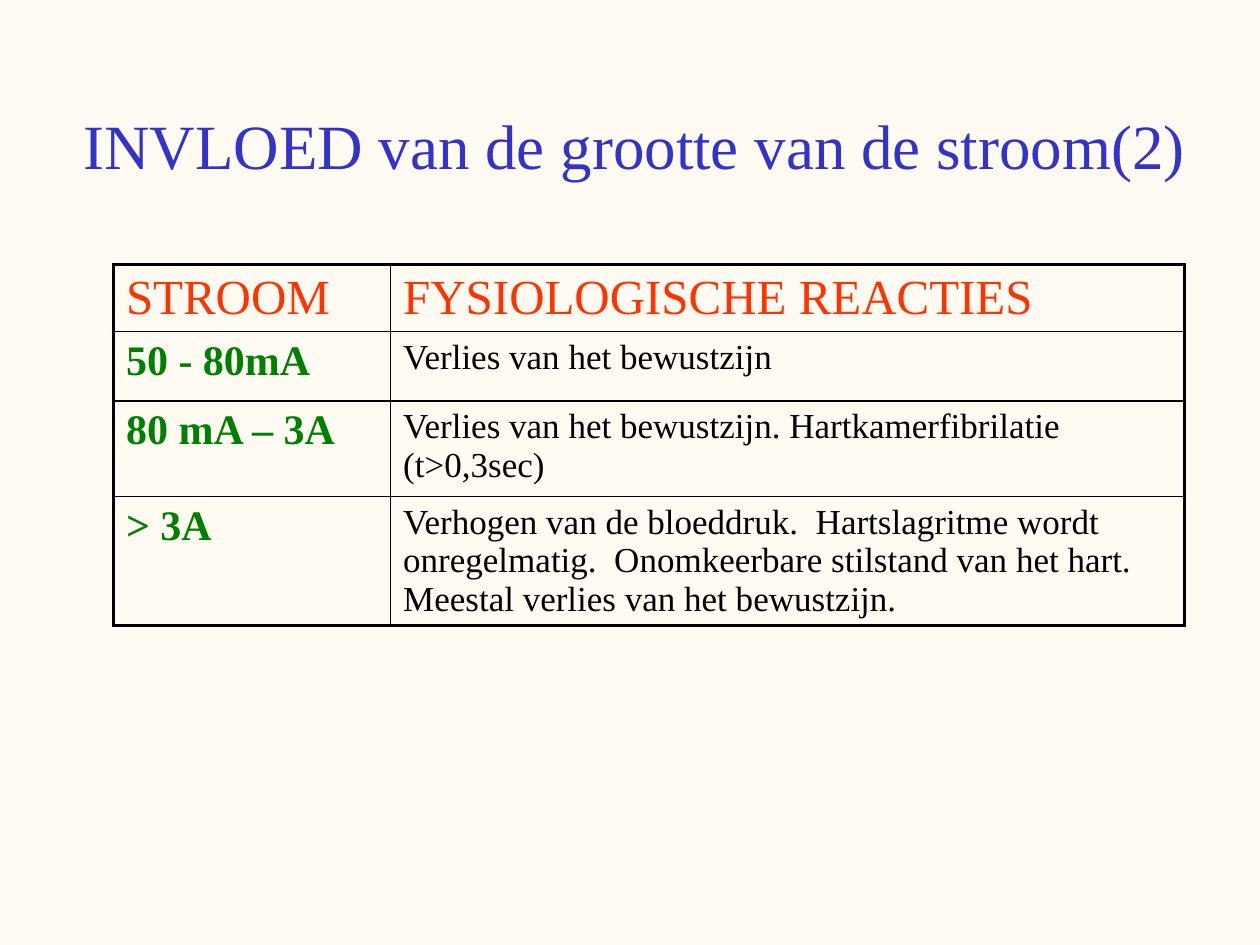
import pptx
import pptx.util
import pptx.dml.color
import pptx.enum.text
import pptx.oxml
import pptx.oxml.ns
from pptx.util import Inches

FONT = "Times New Roman"
BLACK, RED, GREEN, BLUE, CREAM = "000000", "FF3300", "008000", "3333CC", "FFFBF3"
OUTER_LINE, INNER_LINE = 2.25, 1

COLUMN_WIDTHS = [2.2, 6.3]
ROW_HEIGHTS = [0.5, 0.55, 0.76, 0.97]
REACTIONS = [
    ("STROOM", "FYSIOLOGISCHE REACTIES"),
    ("50 - 80mA", "Verlies van het bewustzijn"),
    ("80 mA – 3A", "Verlies van het bewustzijn. Hartkamerfibrilatie (t>0,3sec)"),
    ("> 3A", "Verhogen van de bloeddruk.  Hartslagritme wordt onregelmatig.  "
             "Onomkeerbare stilstand van het hart.  Meestal verlies van het bewustzijn."),
]
# size, colour, bold
HEADER_STYLE = (28, RED, False)
CURRENT_STYLE = (24, GREEN, True)
REACTION_STYLE = (20, BLACK, False)


def rgb(value):
    return pptx.dml.color.RGBColor.from_string(value)


def write(text_frame, text, size, color, bold=False):
    text_frame.text = text
    font = text_frame.paragraphs[0].runs[0].font
    font.name = FONT
    font.size = pptx.util.Pt(size)
    font.bold = bold
    font.color.rgb = rgb(color)


def set_borders(cell, widths):
    """Draw black borders; widths maps L, R, T and B to points."""
    properties = cell._tc.get_or_add_tcPr()
    for position, (side, width) in enumerate(widths.items()):
        line = pptx.oxml.parse_xml(
            f'<a:ln{side} {pptx.oxml.ns.nsdecls("a")} w="{pptx.util.Pt(width)}">'
            f'<a:solidFill><a:srgbClr val="{BLACK}"/></a:solidFill></a:ln{side}>')
        properties.insert(position, line)


def add_title(slide, text):
    title = slide.shapes.title
    title.left, title.top = Inches(0.43), Inches(0.52)
    title.width, title.height = Inches(9.21), Inches(1.25)
    write(title.text_frame, text, 36, BLUE)
    title.text_frame.vertical_anchor = pptx.enum.text.MSO_ANCHOR.MIDDLE
    title.text_frame.paragraphs[0].alignment = pptx.enum.text.PP_ALIGN.CENTER


def add_reaction_table(slide):
    table = slide.shapes.add_table(
        len(ROW_HEIGHTS), len(COLUMN_WIDTHS), Inches(0.9), Inches(2.1),
        Inches(sum(COLUMN_WIDTHS)), Inches(sum(ROW_HEIGHTS))).table
    table.first_row = table.horz_banding = False
    for column, width in zip(table.columns, COLUMN_WIDTHS):
        column.width = Inches(width)
    last_row, last_column = len(ROW_HEIGHTS) - 1, len(COLUMN_WIDTHS) - 1
    for r, texts in enumerate(REACTIONS):
        table.rows[r].height = Inches(ROW_HEIGHTS[r])
        styles = (HEADER_STYLE,) * 2 if r == 0 else (CURRENT_STYLE, REACTION_STYLE)
        for c, (text, style) in enumerate(zip(texts, styles)):
            cell = table.cell(r, c)
            cell.fill.background()
            write(cell.text_frame, text, *style)
            on_edge = {"L": c == 0, "R": c == last_column, "T": r == 0, "B": r == last_row}
            set_borders(cell, {side: OUTER_LINE if outer else INNER_LINE
                               for side, outer in on_edge.items()})


def main():
    presentation = pptx.Presentation()
    presentation.slide_width, presentation.slide_height = Inches(10), Inches(7.5)
    slide = presentation.slides.add_slide(presentation.slide_layouts[5])
    slide.background.fill.solid()
    slide.background.fill.fore_color.rgb = rgb(CREAM)
    add_title(slide, "INVLOED van de grootte van de stroom(2)")
    add_reaction_table(slide)
    presentation.save("out.pptx")


if __name__ == "__main__":
    main()
